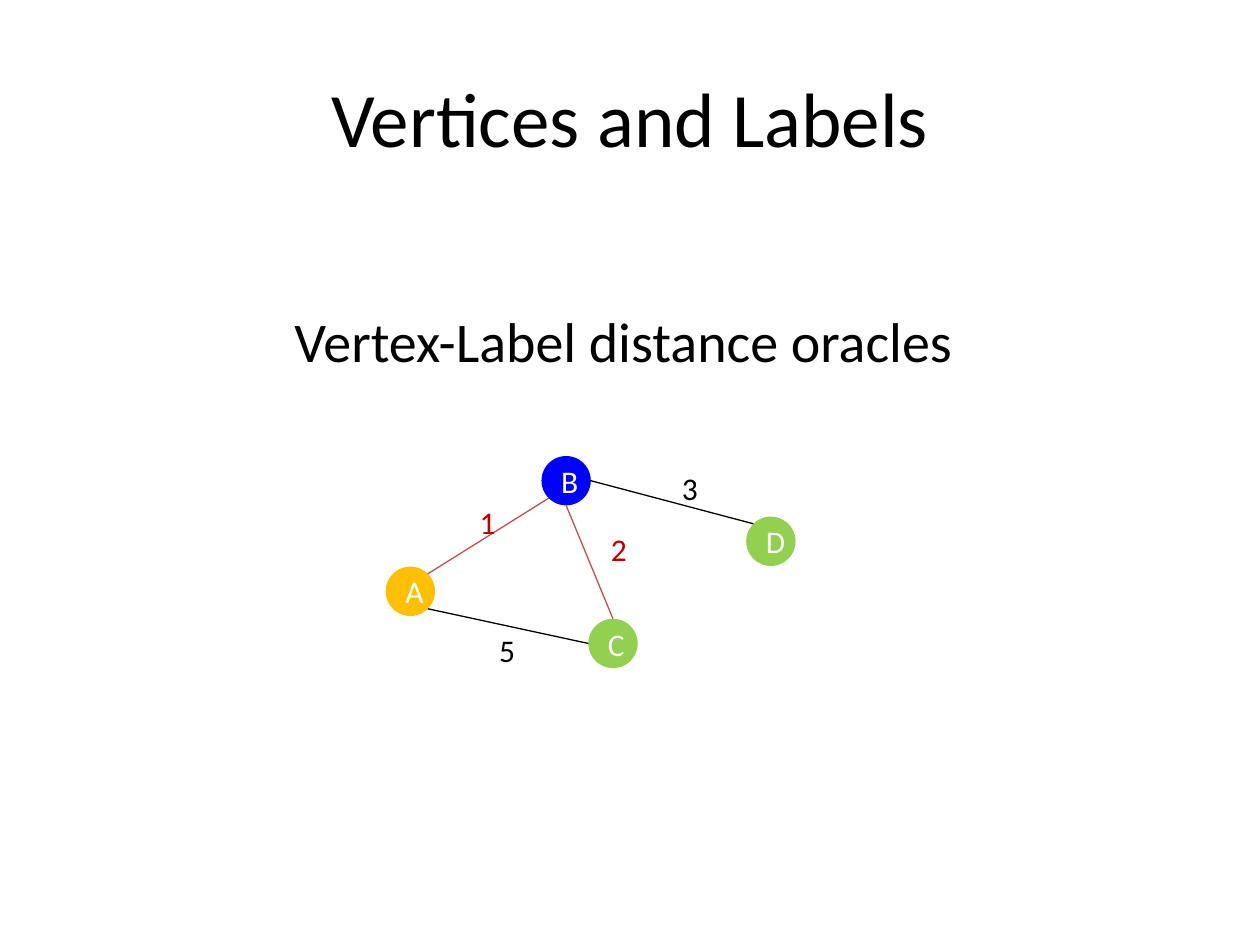
from dataclasses import dataclass
from math import cos, radians, sin

from lxml.etree import SubElement
from pptx import Presentation
from pptx.dml.color import RGBColor
from pptx.enum.shapes import MSO_CONNECTOR, MSO_SHAPE
from pptx.enum.text import MSO_ANCHOR, PP_ALIGN
from pptx.oxml.ns import qn
from pptx.util import Pt


@dataclass(frozen=True)
class Theme:
    font: str = "Calibri"
    title_size: float = 44
    body_size: float = 32
    label_size: float = 18
    line_width: float = 0.75
    black: str = "000000"
    white: str = "FFFFFF"
    orange: str = "FFC000"
    green: str = "92D050"
    blue: str = "0000FF"
    red: str = "C00000"
    route_red: str = "C0504D"


class GraphSlide:
    DIAMETER = 28.2

    def __init__(self, prs, theme):
        self.theme = theme
        self.s = prs.slides.add_slide(prs.slide_layouts[1])
        self.centers = {}

    def add_text(self, tf, text, size, color, align):
        p = tf.paragraphs[0]
        p.alignment = align
        r = p.add_run()
        r.text = text
        r.font.name = self.theme.font
        r.font.size = Pt(size)
        r.font.color.rgb = RGBColor.from_string(color)
        return p

    def place(self, sp, left, top, width, height):
        sp.left, sp.top, sp.width, sp.height = map(Pt, (left, top, width, height))

    def title(self, text):
        sp = self.s.shapes.title
        self.place(sp, 36, 21.6, 648, 90)
        sp.text_frame.vertical_anchor = MSO_ANCHOR.MIDDLE
        self.add_text(sp.text_frame, text, self.theme.title_size, self.theme.black, PP_ALIGN.CENTER)

    def body(self, text):
        sp = self.s.placeholders[1]
        self.place(sp, 36, 126, 648, 356.4)
        tf = sp.text_frame
        tf.margin_top = Pt(49)
        p = self.add_text(tf, text, self.theme.body_size, self.theme.black, PP_ALIGN.CENTER)
        p.space_before = Pt(0)
        pPr = p._p.get_or_add_pPr()
        pPr.set("marL", "0")
        pPr.set("indent", "0")
        SubElement(pPr, qn("a:buNone"))

    def node(self, name, left, top, color):
        d = self.DIAMETER
        sp = self.s.shapes.add_shape(MSO_SHAPE.OVAL, Pt(left), Pt(top), Pt(d), Pt(d))
        sp.shadow.inherit = False
        sp.fill.solid()
        sp.fill.fore_color.rgb = RGBColor.from_string(color)
        sp.line.fill.background()
        sp.text_frame.vertical_anchor = MSO_ANCHOR.MIDDLE
        self.add_text(sp.text_frame, name, self.theme.label_size, self.theme.white, PP_ALIGN.CENTER)
        self.centers[name] = left + d / 2, top + d / 2

    def rim(self, name, angle):
        x, y = self.centers[name]
        radius = self.DIAMETER / 2
        return Pt(x + radius * cos(radians(angle))), Pt(y + radius * sin(radians(angle)))

    def edge(self, start, start_angle, end, end_angle, color):
        line = self.s.shapes.add_connector(
            MSO_CONNECTOR.STRAIGHT, *self.rim(start, start_angle), *self.rim(end, end_angle)
        )
        line.line.color.rgb = RGBColor.from_string(color)
        line.line.width = Pt(self.theme.line_width)
        SubElement(line._element.spPr, qn("a:effectLst"))

    def weight(self, text, left, top, width, color):
        sp = self.s.shapes.add_textbox(Pt(left), Pt(top), Pt(width), Pt(29))
        sp.text_frame.word_wrap = True
        self.add_text(sp.text_frame, text, self.theme.label_size, color, PP_ALIGN.RIGHT)


def main():
    prs = Presentation()
    prs.slide_width, prs.slide_height = Pt(720), Pt(540)
    t = Theme()
    slide = GraphSlide(prs, t)
    slide.title("Vertices and Labels")
    slide.body("Vertex-Label distance oracles ")

    for node in (
        ("A", 220.4, 323.8, t.orange),
        ("D", 426.4, 295.2, t.green),
        ("B", 309.4, 260.6, t.blue),
        ("C", 336.2, 353.6, t.green),
    ):
        slide.node(*node)

    for edge in (
        ("A", -45, "B", 135, t.route_red),
        ("B", 90, "C", -90, t.route_red),
        ("A", 45, "C", 180, t.black),
        ("B", 0, "D", -135, t.black),
    ):
        slide.edge(*edge)

    for weight in (
        ("1", 267, 283.6, 17.4, t.red),
        ("2", 336.2, 299.6, 29, t.red),
        ("5", 267, 357.2, 34.4, t.black),
        ("3", 371.4, 264.4, 34.4, t.black),
    ):
        slide.weight(*weight)

    prs.save("out.pptx")


if __name__ == "__main__":
    main()
